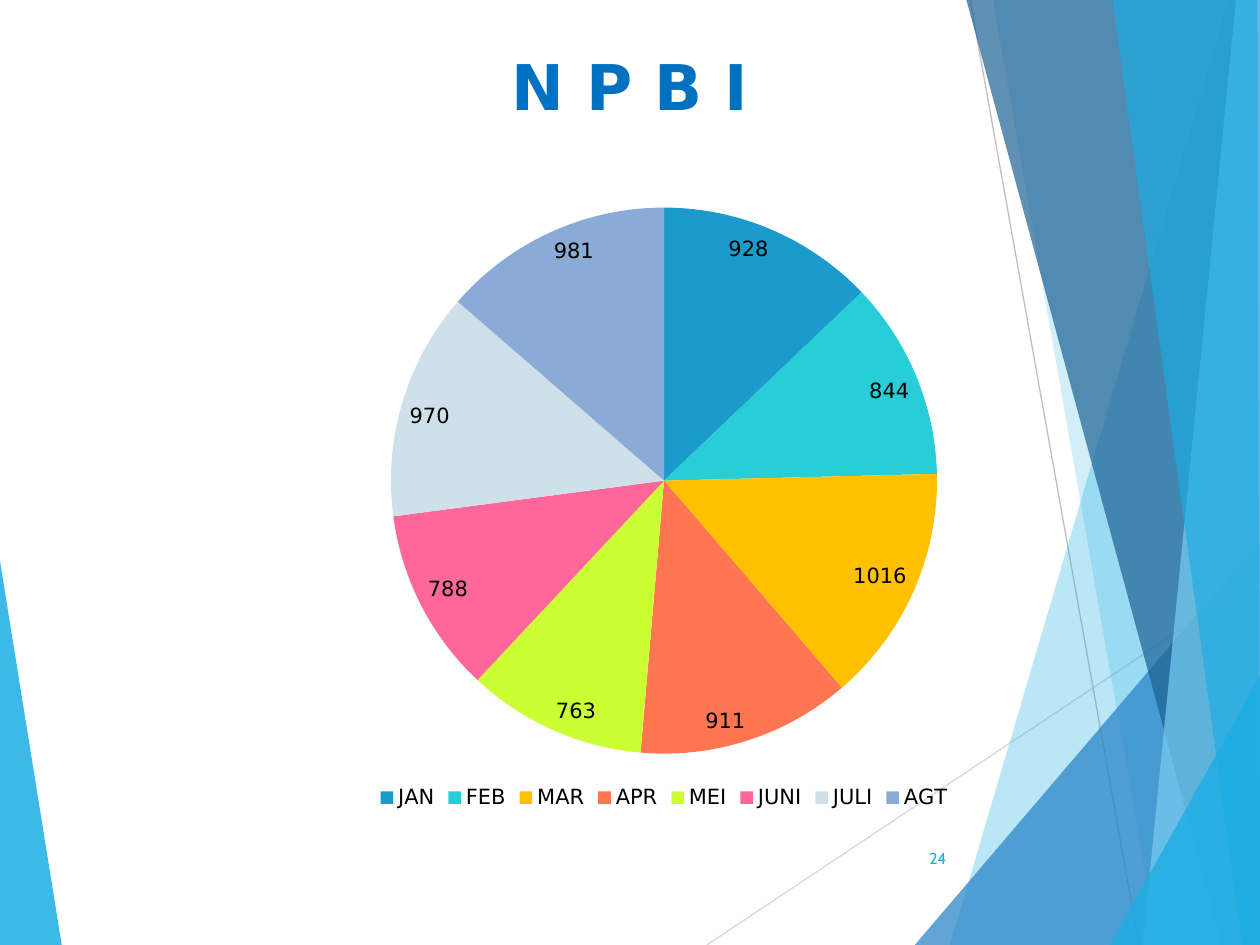
from collections import namedtuple
from dataclasses import dataclass

from lxml import etree
from pptx import Presentation
from pptx import util as u
from pptx.chart.data import CategoryChartData
from pptx.dml.color import RGBColor
from pptx.enum import chart as charts
from pptx.enum import shapes, text
from pptx.oxml.ns import qn

Box = namedtuple("Box", "left top width height")


@dataclass(frozen=True)
class Theme:
    sky: str = "1CADE4"
    blue: str = "2683C6"
    navy: str = "1D6294"
    pale: str = "77CEEF"
    title: str = "0070C0"
    ink: str = "000000"
    heading_font: str = "DejaVu Sans"
    body_font: str = "Cabin"
    title_size: int = 36
    chart_size: int = 12
    number_size: int = 9


THEME = Theme()
SLIDE = Box(0, 0, 10, 7.5)  # grid of ten columns, one inch each

# Shards as fill, opacity in percent, and corners in columns and rows
SHARDS = [
    (THEME.sky, 30, [(9.75, 0), (7.54, 7.5), (10.01, 7.5), (10.01, 0)]),
    (THEME.sky, 20, [(7.88, 0), (9.19, 7.5), (10.01, 7.5), (10.01, 0)]),
    (THEME.blue, 72, [(7.26, 7.5), (10, 4.29), (10.01, 7.5)]),
    (THEME.navy, 70, [(7.67, 0), (9.7, 7.5), (10.01, 7.5), (10.01, 0)]),
    (THEME.pale, 70, [(9.81, 0), (9.07, 7.5), (10.01, 7.5), (10, 0)]),
    (THEME.sky, 65, [(8.83, 0), (9.86, 7.5), (10, 7.5), (9.98, 0)]),
    (THEME.sky, 80, [(8.81, 7.5), (10.01, 5.35), (10.01, 7.5)]),
]
LEFT_SHARD = (THEME.sky, 85, [(-0.01, 4.39), (0.49, 7.5), (-0.01, 7.5)])
RULES = [("D9D9D9", (5.61, 7.5), (10.01, 4.57)),
         ("BFBFBF", (7.7, 0), (9.04, 7.5))]

# Month, value, slice colour
MONTHS = [
    ("JAN", 928, "1A9BCC"), ("FEB", 844, "27CED7"),
    ("MAR", 1016, "FFC000"), ("APR", 911, "FD7651"),
    ("MEI", 763, "CCFF33"), ("JUNI", 788, "FF6699"),
    ("JULI", 970, "CFE0EA"), ("AGT", 981, "8AABD6"),
]


def inches(values):
    return [u.Inches(value) for value in values]


def style_font(font, name, size, colour, bold=False):
    font.name, font.size, font.bold = name, u.Pt(size), bold
    font.color.rgb = RGBColor.from_string(colour)


def add_shard(page, box, colour, opacity, corners):
    points = [inches((box.left + x, box.top + y)) for x, y in corners]
    builder = page.shapes.build_freeform(*points[0])
    builder.add_line_segments(points[1:], close=True)
    shard = builder.convert_to_shape()
    shard.shadow.inherit = False
    shard.line.fill.background()
    shard.fill.solid()
    shard.fill.fore_color.rgb = RGBColor.from_string(colour)
    colour_node = next(shard.fill._xPr.iter(qn("a:srgbClr")))
    etree.SubElement(colour_node, qn("a:alpha"), val=str(opacity * 1000))


def add_rule(page, box, colour, start, end):
    ends = [(box.left + x, box.top + y) for x, y in (start, end)]
    rule = page.shapes.add_connector(
        shapes.MSO_CONNECTOR.STRAIGHT, *inches(ends[0] + ends[1]))
    rule.line.color.rgb = RGBColor.from_string(colour)
    rule.line.width = u.Pt(0.75)
    etree.SubElement(rule._element.spPr, qn("a:effectLst"))


def draw_backdrop(page, box):
    add_shard(page, box, *LEFT_SHARD)
    for rule in RULES:
        add_rule(page, box, *rule)
    for shard in SHARDS:
        add_shard(page, box, *shard)


def place_title(page, box):
    title = page.shapes.title
    title.left, title.top, title.width, title.height = inches(box)
    frame = title.text_frame
    frame.text = "N P B I"
    frame.vertical_anchor = text.MSO_ANCHOR.TOP
    frame.margin_top = u.Inches(0.08)
    para = frame.paragraphs[0]
    para.alignment = text.PP_ALIGN.CENTER
    style_font(para.font, THEME.heading_font, THEME.title_size,
               THEME.title, bold=True)


def draw_pie(page, box):
    names, values, colours = zip(*MONTHS)
    data = CategoryChartData()
    data.categories = names
    data.add_series("Series 1", values)
    chart = page.shapes.add_chart(
        charts.XL_CHART_TYPE.PIE, *inches(box), data).chart
    chart.has_title = False
    style_font(chart.font, THEME.body_font, 18, THEME.ink)

    # Legend
    chart.has_legend = True
    chart.legend.position = charts.XL_LEGEND_POSITION.BOTTOM
    chart.legend.include_in_layout = False

    # Slices and their values
    plot = chart.plots[0]
    plot.vary_by_categories = True
    for index, colour in enumerate(colours):
        fill = plot.series[0].points[index].format.fill
        fill.solid()
        fill.fore_color.rgb = RGBColor.from_string(colour)
    labels = plot.series[0].data_labels
    labels.show_value = True
    labels.position = charts.XL_LABEL_POSITION.INSIDE_END
    for part in (chart.legend, labels):
        style_font(part.font, THEME.heading_font, THEME.chart_size, THEME.ink)


def place_number(page, box):
    frame = page.shapes.add_textbox(*inches(box)).text_frame
    frame.word_wrap = True
    frame.vertical_anchor = text.MSO_ANCHOR.MIDDLE
    para = frame.paragraphs[0]
    para.text = "24"
    para.alignment = text.PP_ALIGN.RIGHT
    style_font(para.font, THEME.body_font, THEME.number_size, THEME.sky)


def main():
    deck = Presentation()
    deck.slide_width, deck.slide_height = inches(SLIDE[2:])
    page = deck.slides.add_slide(deck.slide_layouts.get_by_name("Title Only"))
    draw_backdrop(page, SLIDE)
    place_title(page, Box(0.5, 0.3, 9, 1.25))
    draw_pie(page, Box(0.77, 1.51, 9, 4.96))
    place_number(page, Box(7.05, 6.61, 0.56, 0.4))
    deck.save("out.pptx")


if __name__ == "__main__":
    main()
